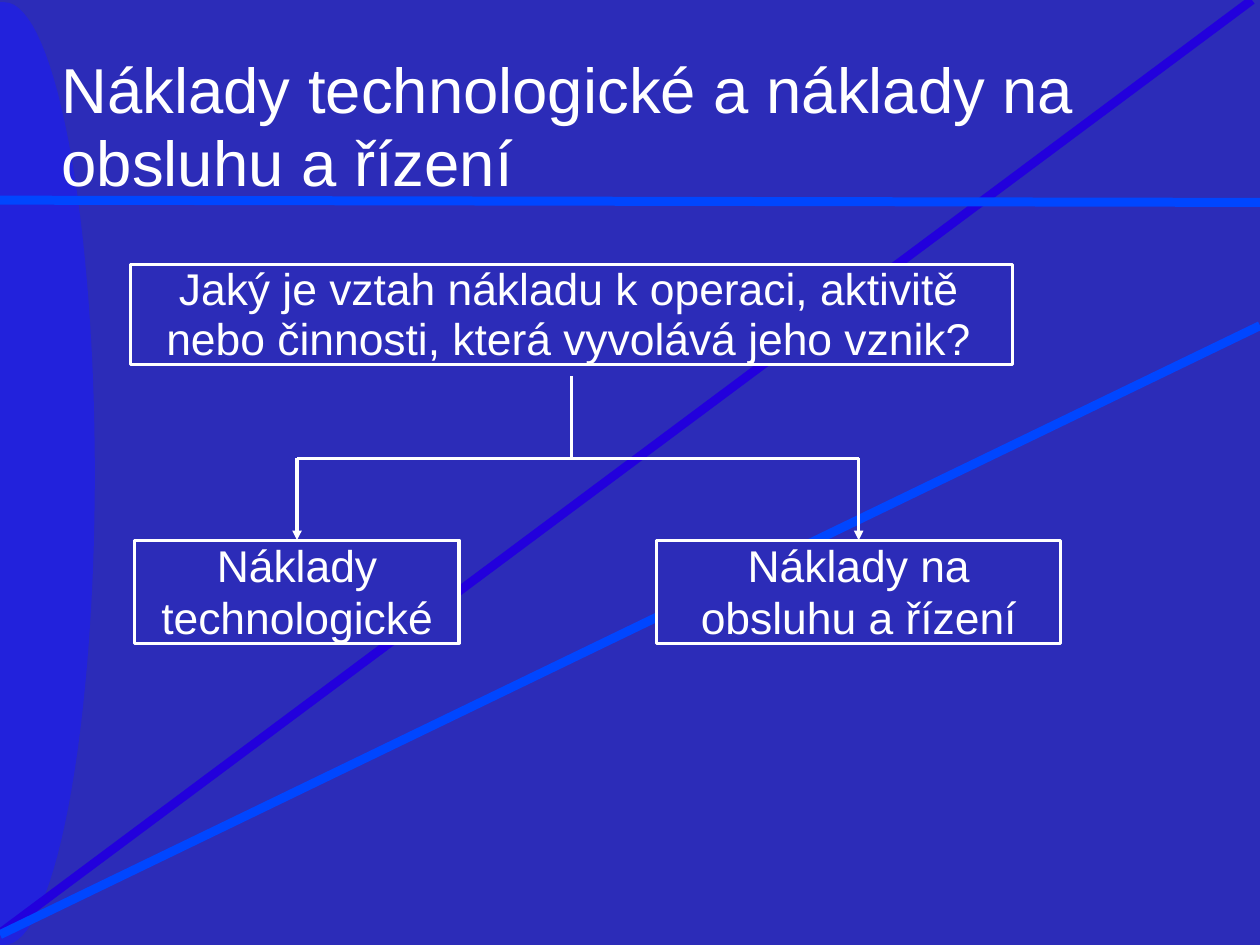
from math import cos, pi, sin

from lxml.etree import SubElement
from pptx import Presentation
from pptx.dml.color import RGBColor
from pptx.enum.shapes import MSO_CONNECTOR, MSO_SHAPE
from pptx.enum.text import MSO_ANCHOR, MSO_AUTO_SIZE, PP_ALIGN
from pptx.oxml.ns import qn
from pptx.util import Cm, Pt

WIDTH, HEIGHT = Cm(28.02), Cm(21.01)
FONT = "Arial"
WHITE, BACKGROUND, CURVE = "FFFFFF", "2C2CB8", "2222DC"
VIOLET, BRIGHT_BLUE = "2200DC", "0046FF"


def paint(color_format, color):
    color_format.rgb = RGBColor.from_string(color)


def fill_solid(fill, color):
    fill.solid()
    paint(fill.fore_color, color)


def write_text(shape, lines, size, spacing, alignment):
    """Write one paragraph per line, without margins, from the top."""
    frame = shape.text_frame
    frame.word_wrap = True
    frame.auto_size = MSO_AUTO_SIZE.NONE
    frame.vertical_anchor = MSO_ANCHOR.TOP
    frame.margin_left = frame.margin_right = frame.margin_top = frame.margin_bottom = 0
    for index, line in enumerate(lines):
        paragraph = frame.add_paragraph() if index else frame.paragraphs[0]
        paragraph.alignment = alignment
        paragraph.line_spacing = Pt(spacing)
        paragraph.space_before = Pt(0)
        run = paragraph.add_run()
        run.text = line
        run.font.name = FONT
        run.font.size = Pt(size)
        paint(run.font.color, WHITE)


def add_box(slide, left, top, width, height, lines, spacing, alignment=PP_ALIGN.CENTER):
    box = slide.shapes.add_shape(MSO_SHAPE.RECTANGLE, left, top, width, height)
    box.shadow.inherit = False
    fill_solid(box.fill, BACKGROUND)
    paint(box.line.color, WHITE)
    box.line.width = Pt(2)
    write_text(box, lines, 28, spacing, alignment)
    return box


def add_line(slide, start, end, color, width, arrow=False):
    line = slide.shapes.add_connector(MSO_CONNECTOR.STRAIGHT, *start, *end)
    paint(line.line.color, color)
    line.line.width = Pt(width)
    if arrow:
        SubElement(line.line._get_or_add_ln(), qn("a:tailEnd"), type="triangle")
    SubElement(line.element.spPr, qn("a:effectLst"))
    return line


def add_curved_edge(slide):
    """Right half of a tall ellipse along the left edge."""
    center_x, center_y, radius_x, radius_y = Cm(0.1), Cm(10.53), Cm(2.01), Cm(10.48)
    steps = 60
    angles = [pi * step / steps - pi / 2 for step in range(steps + 1)]
    points = [(round(center_x + radius_x * cos(angle)), round(center_y + radius_y * sin(angle)))
              for angle in angles]
    builder = slide.shapes.build_freeform(0, center_y - radius_y)
    builder.add_line_segments(points + [(0, center_y + radius_y)], close=True)
    curve = builder.convert_to_shape()
    curve.shadow.inherit = False
    fill_solid(curve.fill, CURVE)
    curve.line.fill.background()


def add_backdrop(slide):
    fill_solid(slide.background.fill, BACKGROUND)
    add_curved_edge(slide)
    stripes = [
        ((Cm(27.84), 0), (0, Cm(20.75)), VIOLET),
        ((0, Cm(4.45)), (WIDTH, Cm(4.5)), BRIGHT_BLUE),
        ((WIDTH, Cm(7.24)), (0, Cm(20.78)), BRIGHT_BLUE),
    ]
    for start, end, color in stripes:
        add_line(slide, start, end, color, 5.67)


def add_title(slide):
    title = slide.shapes.title
    title.left, title.top, title.width, title.height = Cm(1.37), Cm(1.17), Cm(25.27), Cm(3.28)
    write_text(title, ["Náklady technologické a náklady na", "obsluhu a řízení"],
               40, 46.3, PP_ALIGN.LEFT)
    # Bring the title in front of the backdrop
    title.element.getparent().append(title.element)


def add_decision_tree(slide):
    # Question, with its first line indented further
    question = add_box(
        slide, Cm(2.9), Cm(5.89), Cm(19.61), Cm(2.21),
        ["Jaký je vztah nákladu k operaci, aktivitě nebo činnosti, která vyvolává jeho vznik?"],
        31.3, PP_ALIGN.LEFT)
    properties = question.text_frame.paragraphs[0]._p.get_or_add_pPr()
    properties.set("marL", str(Cm(0.8)))
    properties.set("indent", str(Cm(0.28)))

    # Answers
    top, height = Cm(12.01), Cm(2.29)
    answers = [
        add_box(slide, Cm(3), top, Cm(7.21), height, ["Náklady", "technologické"], 32.5),
        add_box(slide, Cm(14.6), top, Cm(8.99), height, ["Náklady na", "obsluhu a řízení"], 32.5),
    ]

    # Stem, crossbar and arrows
    stem_x = question.left + question.width // 2
    branch_y = Cm(10.19)
    centers = [answer.left + answer.width // 2 for answer in answers]
    add_line(slide, (stem_x, Cm(8.36)), (stem_x, branch_y), WHITE, 2)
    add_line(slide, (centers[0], branch_y), (centers[1], branch_y), WHITE, 2)
    for answer, center in zip(answers, centers):
        arrow = add_line(slide, (center, branch_y), (center, top), WHITE, 2, arrow=True)
        arrow.end_connect(answer, 0)


def main():
    presentation = Presentation()
    presentation.slide_width, presentation.slide_height = WIDTH, HEIGHT
    slide = presentation.slides.add_slide(presentation.slide_layouts[5])
    add_backdrop(slide)
    add_title(slide)
    add_decision_tree(slide)
    presentation.save("out.pptx")


if __name__ == "__main__":
    main()
